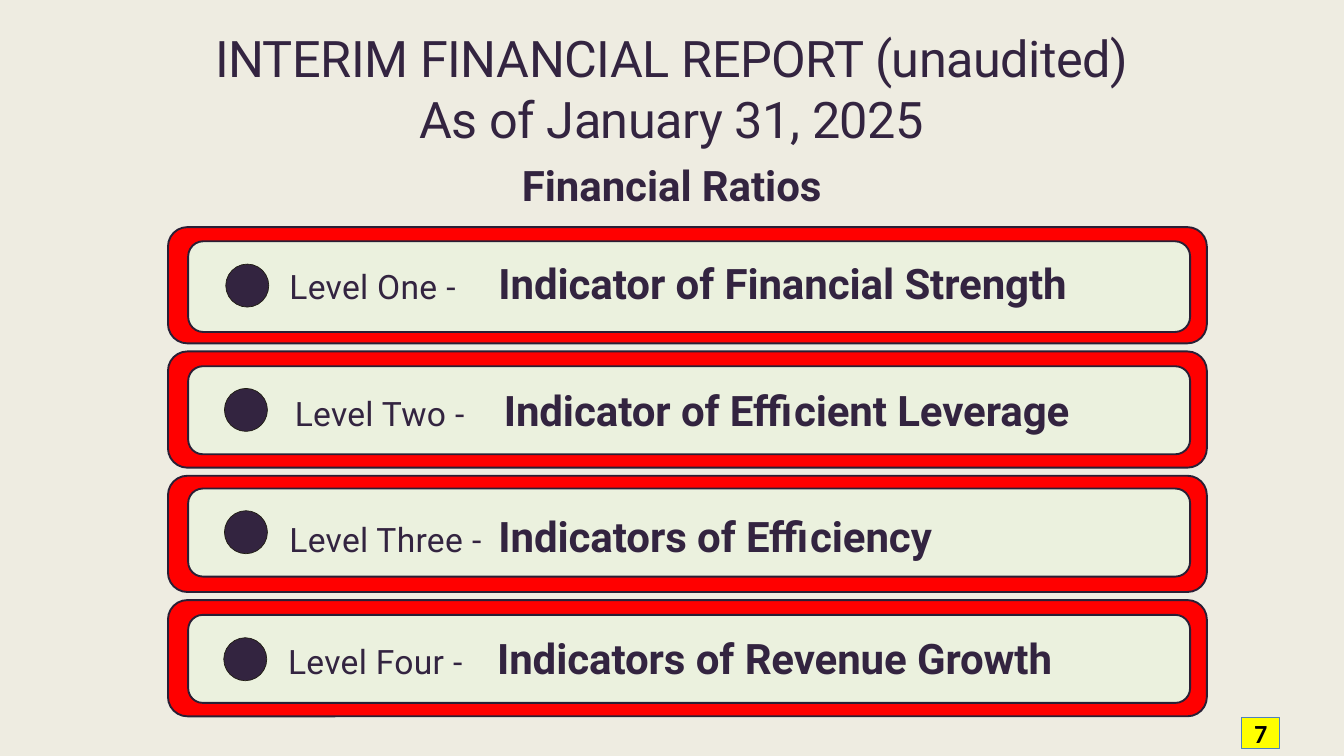
from pptx import Presentation
from pptx.dml.color import RGBColor
from pptx.enum.shapes import MSO_SHAPE
from pptx.enum.text import MSO_ANCHOR, MSO_AUTO_SIZE, PP_ALIGN
from pptx.oxml.xmlchemy import OxmlElement
from pptx.util import Inches, Pt

ROUNDED, OVAL, RECT = MSO_SHAPE.ROUNDED_RECTANGLE, MSO_SHAPE.OVAL, MSO_SHAPE.RECTANGLE
TOP, MIDDLE = MSO_ANCHOR.TOP, MSO_ANCHOR.MIDDLE
CENTER = PP_ALIGN.CENTER
NO_AUTOFIT = MSO_AUTO_SIZE.NONE

COLORS = {
    "background": "EEECE1", "ink": "332440", "outline": "291F35",
    "bar": "FF0000", "panel": "EBF1DE", "dot_line": "1E1C11",
    "badge": "FFFF00", "badge_line": "4F81BD", "black": "000000",
}

HEADING = ["INTERIM FINANCIAL REPORT (unaudited)", "As of January 31, 2025"]
SUBHEADING = "Financial Ratios"
PAGE_NUMBER = "7"

# level, indicator, then inches: panel top, panel height, dot left and top, label left and top
LEVELS = [
    ("Level One ", "Indicator of Financial Strength", 3.59, 1.35, (3.36, 3.93), (4.21, 3.79)),
    ("Level Two ", "Indicator of Efficient Leverage", 5.45, 1.31, (3.34, 5.78), (4.29, 5.67)),
    ("Level Three ", "Indicators of Efficiency", 7.27, 1.31, (3.34, 7.60), (4.21, 7.55)),
    ("Level Four ", "Indicators of Revenue Growth", 9.15, 1.31, (3.33, 9.49), (4.19, 9.36)),
]
BAR_LEFT, BAR_TOP, BAR_WIDTH, BAR_HEIGHT, BAR_PITCH = 2.5, 3.38, 15.46, 1.73, 1.85
PANEL_LEFT, PANEL_WIDTH = 2.8, 14.91
DOT_SIZE = 0.64
LABEL_WIDTH, LABEL_HEIGHT = 13.36, 0.86
INDICATOR_TAB = 3.11


def rgb(name):
    return RGBColor.from_string(COLORS[name])


def add_box(slide, preset, box, fill, line, line_width):
    shape = slide.shapes.add_shape(preset, *map(Inches, box))
    shape.shadow.inherit = False
    shape.fill.solid()
    shape.fill.fore_color.rgb = rgb(fill)
    shape.line.color.rgb = rgb(line)
    shape.line.width = Pt(line_width)
    return shape


def add_run(paragraph, text, size, spacing=0, bold=False, font="Roboto", color="ink"):
    """Add one run; spacing is the gap between letters in points."""
    run = paragraph.add_run()
    run.text = text
    run.font.name = font
    run.font.size = Pt(size)
    run.font.bold = bold
    run.font.color.rgb = rgb(color)
    if spacing:
        run.font._element.set("spc", str(round(spacing * 100)))


def set_tab_stop(paragraph, position):
    tabs = OxmlElement("a:tabLst")
    tab = OxmlElement("a:tab")
    tab.set("pos", str(Inches(position)))
    tab.set("algn", "l")
    tabs.append(tab)
    paragraph._p.get_or_add_pPr().append(tabs)


def set_frame(frame, anchor, margin=0):
    frame.word_wrap = True
    frame.auto_size = NO_AUTOFIT
    frame.vertical_anchor = anchor
    frame.margin_left = frame.margin_right = Inches(margin)
    frame.margin_top = frame.margin_bottom = Inches(margin / 2)


def add_title(slide):
    title = slide.shapes.title
    title.left, title.top, title.width, title.height = map(Inches, (2.5, 0.41, 14.99, 2.74))
    frame = title.text_frame
    set_frame(frame, TOP)
    heading = frame.paragraphs[0]
    for number, line in enumerate(HEADING):
        if number:
            heading.add_line_break()
        add_run(heading, line, 54, -0.5)
    subheading = frame.add_paragraph()
    add_run(subheading, SUBHEADING, 45, -0.1, bold=True)
    for paragraph, gap in ((heading, 1), (subheading, 12)):
        paragraph.alignment = CENTER
        paragraph.line_spacing = 1.0
        paragraph.space_before = Pt(gap)


def add_level(slide, row, level, indicator, panel_top, panel_height, dot, label):
    bar_top = BAR_TOP + row * BAR_PITCH
    add_box(slide, ROUNDED, (BAR_LEFT, bar_top, BAR_WIDTH, BAR_HEIGHT), "bar", "outline", 2)
    add_box(slide, ROUNDED, (PANEL_LEFT, panel_top, PANEL_WIDTH, panel_height),
            "panel", "outline", 2)
    add_box(slide, OVAL, (*dot, DOT_SIZE, DOT_SIZE), "ink", "dot_line", 0.75)

    textbox = slide.shapes.add_textbox(*map(Inches, (*label, LABEL_WIDTH, LABEL_HEIGHT)))
    set_frame(textbox.text_frame, TOP, margin=0.1)
    paragraph = textbox.text_frame.paragraphs[0]
    paragraph.space_before = Pt(5.8)
    set_tab_stop(paragraph, INDICATOR_TAB)
    add_run(paragraph, level, 36, 0.3)
    add_run(paragraph, "-\t", 36)
    add_run(paragraph, indicator, 45, -0.1, bold=True)


def add_page_number(slide):
    badge = add_box(slide, RECT, (18.48, 10.67, 0.56, 0.47), "badge", "badge_line", 0.75)
    set_frame(badge.text_frame, MIDDLE)
    paragraph = badge.text_frame.paragraphs[0]
    paragraph.alignment = CENTER
    add_run(paragraph, PAGE_NUMBER, 28, bold=True, font="Calibri", color="black")


def main():
    deck = Presentation()
    deck.slide_width, deck.slide_height = Inches(20), Inches(11.25)
    slide = deck.slides.add_slide(deck.slide_layouts[5])
    slide.background.fill.solid()
    slide.background.fill.fore_color.rgb = rgb("background")
    add_title(slide)
    for row, content in enumerate(LEVELS):
        add_level(slide, row, *content)
    add_page_number(slide)
    deck.save("out.pptx")


if __name__ == "__main__":
    main()
